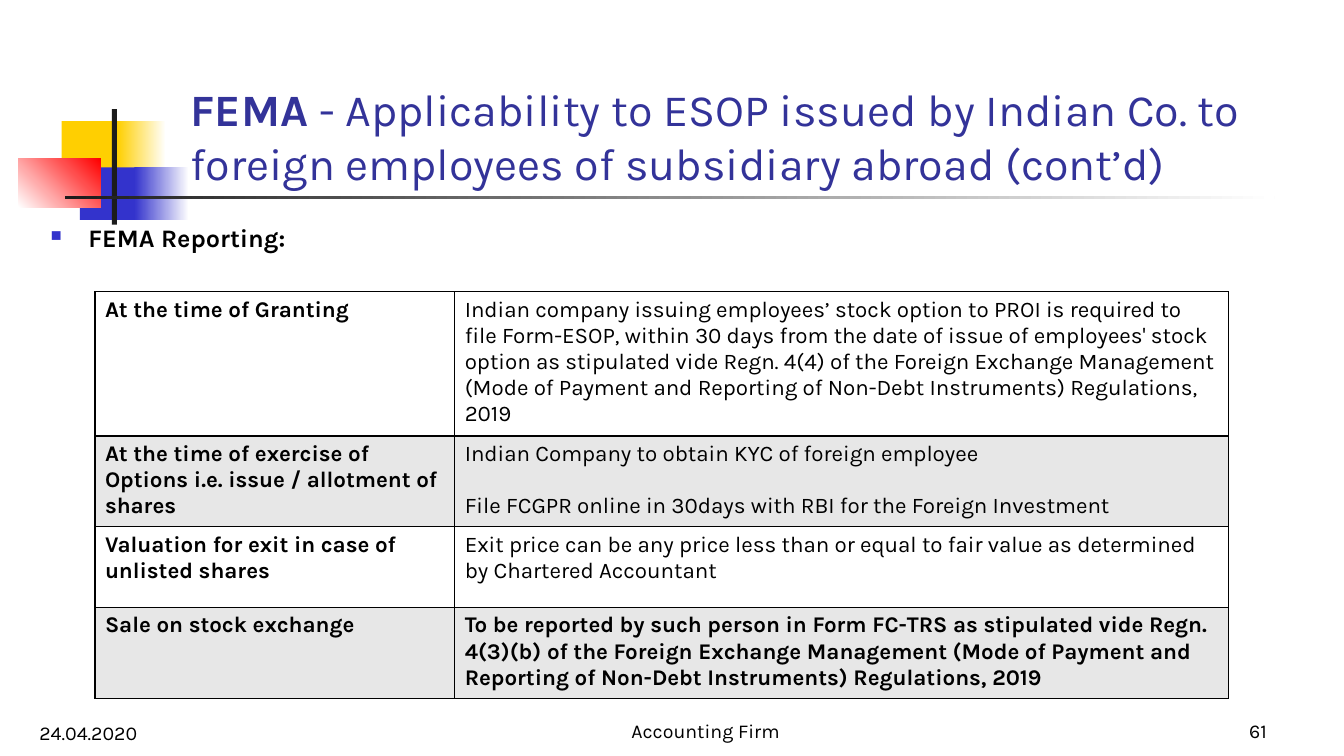
from pptx import Presentation as Deck
from pptx.dml.color import RGBColor as Color
from pptx.enum.shapes import MSO_SHAPE as Shape
from pptx.enum.text import MSO_ANCHOR as Anchor, PP_ALIGN as Align
from pptx.oxml import parse_xml as to_xml
from pptx.oxml.ns import nsdecls as names
from pptx.util import Pt

HUES = {
    "gold": "FFCF01", "blue": "3333CC", "red": "FF0000", "dark": "1C1C1C",
    "navy": "333399", "black": "000000", "white": "FFFFFF", "grey": "E7E7E7",
}


def hue(name):
    return Color.from_string(HUES[name])


def write(frame, runs, size=16, color="black", bold=False, align=Align.LEFT,
          gap=0, font="Karla", fresh=True):
    para = frame.paragraphs[0] if fresh else frame.add_paragraph()
    para.alignment = align
    para.space_before = Pt(gap)
    for text, heavy in [(runs, bold)] if isinstance(runs, str) else runs:
        run = para.add_run()
        run.text = text
        run.font.name = font
        run.font.size = Pt(size)
        run.font.bold = heavy
        run.font.color.rgb = hue(color)
    return para


class Page:
    def __init__(self, deck):
        self.slide = deck.slides.add_slide(deck.slide_layouts[6])
        self.shapes = self.slide.shapes
        back = self.slide.background.fill
        back.solid()
        back.fore_color.rgb = hue("white")

    def block(self, box, start, end=None, angle=0):
        shape = self.shapes.add_shape(Shape.RECTANGLE, *map(Pt, box))
        shape.shadow.inherit = False
        shape.line.fill.background()
        if end is None:
            shape.fill.solid()
            shape.fill.fore_color.rgb = hue(start)
            return
        shape.fill.gradient()
        shape.fill.gradient_angle = angle
        for stop, name, place in zip(shape.fill.gradient_stops, (start, end), (0, 1)):
            stop.color.rgb = hue(name)
            stop.position = place

    def text(self, box, runs, anchor=Anchor.BOTTOM, **style):
        frame = self.shapes.add_textbox(*map(Pt, box)).text_frame
        frame.word_wrap = True
        frame.vertical_anchor = anchor
        return write(frame, runs, **style)

    def bullet(self, box, runs, indent=27, **style):
        props = self.text(box, runs, Anchor.TOP, **style)._p.get_or_add_pPr()
        props.set("marL", str(Pt(indent)))
        props.set("indent", str(-Pt(indent)))
        for part in (f'<a:buClr {names("a")}><a:srgbClr val="{HUES["blue"]}"/></a:buClr>',
                     f'<a:buSzPct {names("a")} val="60000"/>',
                     f'<a:buChar {names("a")} char="■"/>'):
            props.append(to_xml(part))

    def edge(self, cell):
        props = cell._tc.get_or_add_tcPr()
        for side in "LRTB":
            props.append(to_xml(
                f'<a:ln{side} {names("a")} w="{Pt(1)}"><a:solidFill>'
                f'<a:srgbClr val="{HUES["black"]}"/></a:solidFill></a:ln{side}>'))

    def table(self, left, top, widths, rows):
        size = (sum(widths), sum(row[0] for row in rows))
        grid = self.shapes.add_table(
            len(rows), len(widths), *map(Pt, (left, top, *size))).table
        grid.first_row = grid.horz_banding = False
        for col, width in zip(grid.columns, widths):
            col.width = Pt(width)
        for i, (height, head, lines, bold) in enumerate(rows):
            grid.rows[i].height = Pt(height)
            for j, (texts, heavy) in enumerate((([head], True), (lines, bold))):
                cell = grid.cell(i, j)
                self.edge(cell)
                cell.fill.solid()
                cell.fill.fore_color.rgb = hue("grey" if i % 2 else "white")
                for k, text in enumerate(texts):
                    write(cell.text_frame, text, bold=heavy, fresh=k == 0,
                          gap=18.7 if k else 0)


ROWS = [
    (100.8, "At the time of Granting",
     ["Indian company issuing employees’ stock option to PROI is required to file "
      "Form-ESOP, within 30 days from the date of issue of employees' stock option "
      "as stipulated vide Regn. 4(4) of the Foreign Exchange Management (Mode of "
      "Payment and Reporting of Non-Debt Instruments) Regulations, 2019"], False),
    (63.3, "At the time of exercise of Options i.e. issue / allotment of shares",
     ["Indian Company to obtain KYC of foreign employee",
      "File FCGPR online in 30days with RBI for the Foreign Investment"], False),
    (57.6, "Valuation for exit in case of unlisted shares",
     ["Exit price can be any price less than or equal to fair value as determined "
      "by Chartered Accountant"], False),
    (63.3, "Sale on stock exchange",
     ["To be reported by such person in Form FC-TRS as stipulated vide Regn. "
      "4(3)(b) of the Foreign Exchange Management (Mode of Payment and Reporting "
      "of Non-Debt Instruments) Regulations, 2019"], True),
]


def main():
    deck = Deck()
    deck.slide_width, deck.slide_height = Pt(960), Pt(540)
    page = Page(deck)

    page.block((44, 86.5, 46, 37.5), "gold")
    page.block((84, 86.5, 34.5, 37.5), "gold", "white")
    page.block((57, 119.5, 44.5, 37.5), "blue")
    page.block((96, 119.5, 39, 37.5), "blue", "white")
    page.block((13, 113.5, 59, 34.5), "white", "red", 45)
    page.block((80, 78, 3.5, 82.5), "dark")
    page.block((46.5, 140, 864, 2.5), "dark", "white")

    page.text((129, 28, 810, 111),
              [("FEMA", True),
               (" - Applicability to ESOP issued by Indian Co. to foreign employees "
                "of subsidiary abroad (cont’d)", False)], size=32, color="navy")
    page.bullet((29, 155.5, 910, 362), "FEMA Reporting:", size=18, bold=True, gap=3.6)
    page.table(67.8, 208.3, (257, 553), ROWS)

    page.text((712, 498, 200, 36), "61", size=14, align=Align.RIGHT)
    page.text((21, 499, 200, 36), "24.04.2020", size=14)
    page.text((352, 498, 304, 36), "Accounting Firm", size=14, align=Align.CENTER)
    deck.save("out.pptx")


if __name__ == "__main__":
    main()
